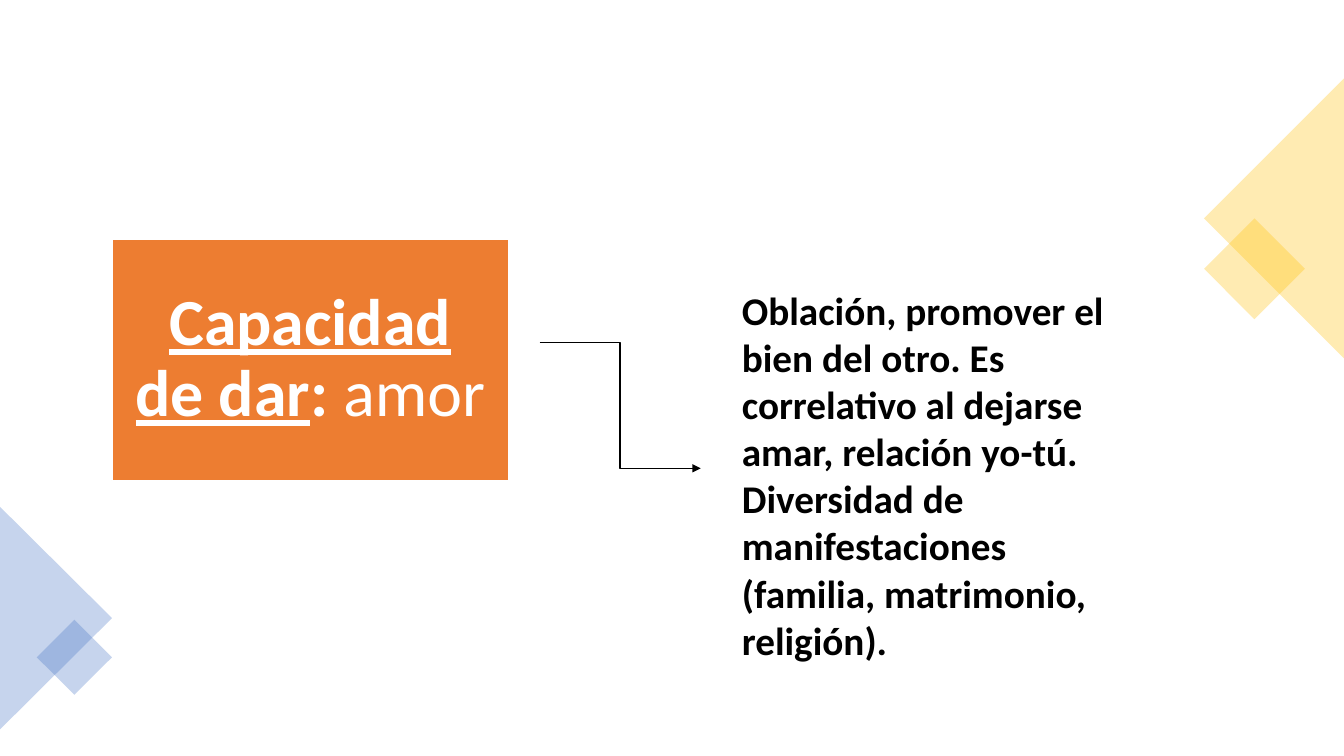
from lxml import etree
from pptx import Presentation
from pptx import util as u
from pptx.dml import color
from pptx.enum import shapes, text
from pptx.oxml import ns

COLORS = {"gold": "FFC000", "blue": "4472C4", "orange": "ED7D31",
          "white": "FFFFFF", "black": "000000"}


def rgb(name):
    """Return the named colour."""
    return color.RGBColor.from_string(COLORS[name])


def apply(target, values):
    """Set every attribute listed in a dict of format values."""
    for name, value in values.items():
        setattr(target, name, value)


def place(shape, box):
    """Move and size a shape to a box in points."""
    apply(shape, dict(zip(("left", "top", "width", "height"), map(u.Pt, box))))


def add_veil(slide, kind, center, size, rotation, fill):
    """Add a rotated, 30 % opaque shape around a centre point."""
    x, y = center
    width, height = size
    box = (x - width / 2, y - height / 2, width, height)
    shape = slide.shapes.add_shape(kind, *map(u.Pt, box))
    shape.rotation = rotation
    shape.shadow.inherit = False
    shape.line.fill.background()
    shape.fill.solid()
    shape.fill.fore_color.rgb = rgb(fill)
    tint = shape.fill._xPr.find(".//" + ns.qn("a:srgbClr"))
    etree.SubElement(tint, ns.qn("a:alpha"), val="30000")


def add_corner(slide, box, points_left, side, drop, fill):
    """Add an edge triangle filling the box and a diamond near its tip."""
    left, top, width, height = box
    middle = top + height / 2
    reach = side / 2 ** 0.5
    diamond_x = left + reach if points_left else left + width - reach
    add_veil(slide, shapes.MSO_SHAPE.ISOSCELES_TRIANGLE,
             (left + width / 2, middle), (height, width),
             270 if points_left else 90, fill)
    add_veil(slide, shapes.MSO_SHAPE.RECTANGLE,
             (diamond_x, middle + drop), (side, side), 45, fill)


def fill_text(shape, box, runs, frame_values, paragraph_values, font_values, ink):
    """Place a placeholder and write one paragraph of formatted runs."""
    place(shape, box)
    frame = shape.text_frame
    apply(frame, frame_values)
    paragraph = frame.paragraphs[0]
    apply(paragraph, paragraph_values)
    for words, run_values in runs:
        run = paragraph.add_run()
        run.text = words
        apply(run.font, {**font_values, **run_values})
        run.font.color.rgb = rgb(ink)
    return paragraph


def add_concept(slide, box):
    """Fill the title placeholder as the orange concept card."""
    title = slide.shapes.title
    margins = {f"margin_{edge}": u.Pt(14.4) for edge in ("left", "top", "right", "bottom")}
    fill_text(title, box,
              [("Capacidad de dar", {"underline": True}), (": ", {}), ("amor", {"bold": False})],
              {**margins, "word_wrap": True, "auto_size": text.MSO_AUTO_SIZE.NONE,
               "vertical_anchor": text.MSO_ANCHOR.MIDDLE},
              {"alignment": text.PP_ALIGN.CENTER, "line_spacing": 0.9},
              {"name": "Calibri", "size": u.Pt(47), "bold": True}, "white")
    title.fill.solid()
    title.fill.fore_color.rgb = rgb("orange")
    title.line.color.rgb = rgb("white")
    title.line.width = u.Pt(1)


def add_explanation(slide, box):
    """Fill the body placeholder with the unbulleted explanation."""
    words = ("Oblación, promover el bien del otro. Es correlativo al dejarse amar, "
             "relación yo-tú. Diversidad de manifestaciones (familia, matrimonio, religión).")
    paragraph = fill_text(
        slide.placeholders[1], box, [(words, {})],
        {"word_wrap": True, "auto_size": text.MSO_AUTO_SIZE.NONE,
         "vertical_anchor": text.MSO_ANCHOR.TOP},
        {"alignment": text.PP_ALIGN.LEFT, "space_before": u.Pt(0), "line_spacing": 1.0},
        {"name": "Calibri", "size": u.Pt(28), "bold": True}, "black")
    properties = paragraph._p.get_or_add_pPr()
    properties.set("marL", "0")
    properties.set("indent", "0")
    etree.SubElement(properties, ns.qn("a:buNone"))


def add_arrow(slide, box):
    """Add an elbow arrow from the top left to the bottom right of the box."""
    left, top, width, height = box
    arrow = slide.shapes.add_connector(
        shapes.MSO_CONNECTOR.ELBOW, *map(u.Pt, (left, top, left + width, top + height)))
    arrow.line.color.rgb = rgb("black")
    arrow.line.width = u.Pt(1)
    etree.SubElement(arrow.line._get_or_add_ln(), ns.qn("a:tailEnd"), type="triangle")
    etree.SubElement(arrow._element.spPr, ns.qn("a:effectLst"))


def main():
    """Build and save the slide."""
    presentation = Presentation()
    apply(presentation, {"slide_width": u.Pt(960), "slide_height": u.Pt(540)})
    slide = presentation.slides.add_slide(presentation.slide_layouts[1])
    add_corner(slide, (860, 56, 100, 200), True, 51, 36, "gold")
    add_corner(slide, (0, 362, 80, 159), False, 38, 28, "blue")
    add_concept(slide, (80, 170.8, 283.5, 172.5))
    add_explanation(slide, (522.7, 201, 297.4, 278.6))
    add_arrow(slide, (385.5, 244.5, 115, 90))
    presentation.save("out.pptx")


if __name__ == "__main__":
    main()
